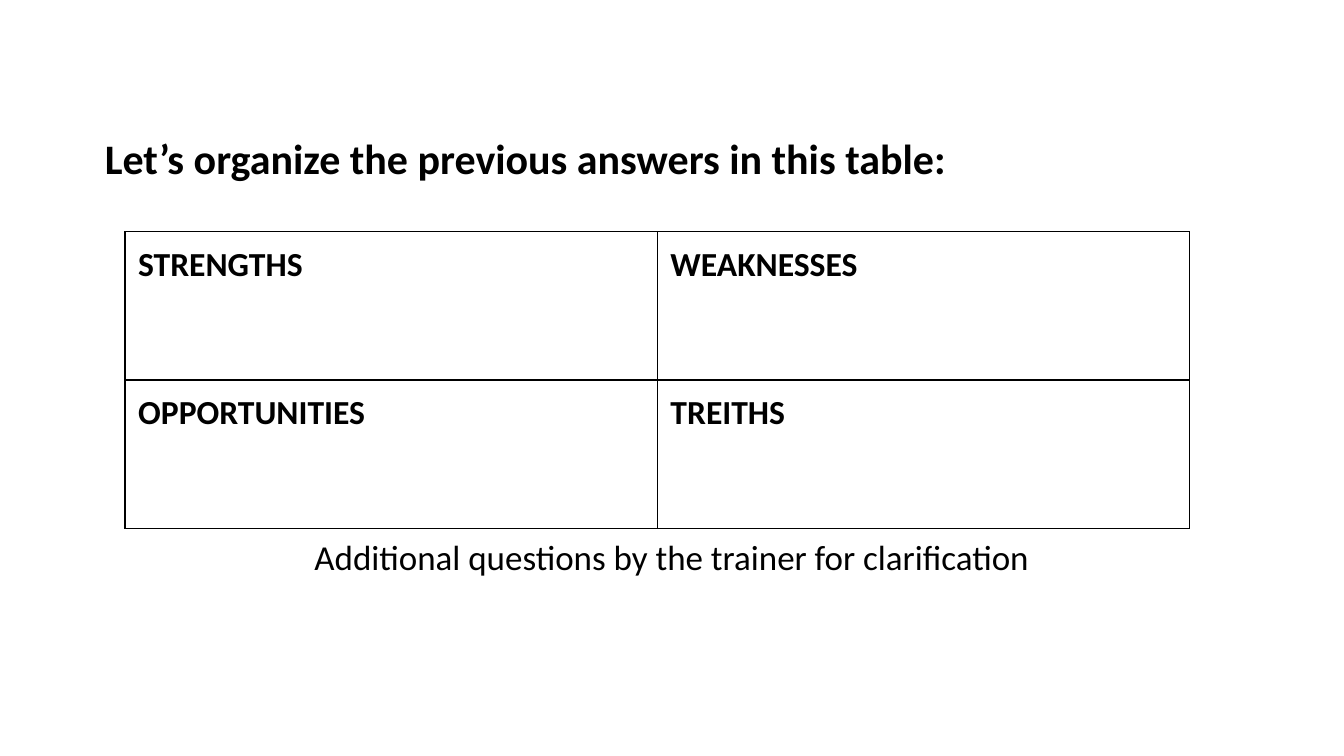
from dataclasses import dataclass

from lxml import etree
from pptx import Presentation, util as u
from pptx.dml.color import RGBColor
from pptx.enum import text
from pptx.oxml.ns import qn

COLORS = {"ink": "000000", "paper": "FFFFFF"}
WIDTH, HEIGHT = 13.33, 7.5
INSET = u.Inches(0.13)
BORDER = u.Pt(1)
SIDES = ("a:lnL", "a:lnR", "a:lnT", "a:lnB")
TABLE_LEFT, TABLE_TOP = 1.24, 2.3
COL, ROW = 5.28, 1.47
SWOT = (("STRENGTHS", "WEAKNESSES"), ("OPPORTUNITIES", "TREITHS"))


@dataclass(frozen=True)
class Line:
    words: str
    left: float
    top: float
    size: float
    bold: bool
    align: text.PP_ALIGN


LINES = (
    Line("Let’s organize the previous answers in this table:",
         0.91 / WIDTH, 1.24 / HEIGHT, 30, True, text.PP_ALIGN.LEFT),
    Line("Additional questions by the trainer for clarification",
         0.45 / WIDTH, 5.23 / HEIGHT, 25, False, text.PP_ALIGN.CENTER),
)


def write(p, words: str, size: float, bold: bool) -> None:
    r = p.add_run()
    r.text = words
    for name, value in {"name": "Calibri", "size": u.Pt(size), "bold": bold}.items():
        setattr(r.font, name, value)
    r.font.color.rgb = RGBColor.from_string(COLORS["ink"])


def set_insets(target) -> None:
    for side in ("left", "right", "top", "bottom"):
        setattr(target, f"margin_{side}", INSET)


def add_line(s, line: Line) -> None:
    sp = s.shapes.add_textbox(
        u.Inches(line.left * WIDTH), u.Inches(line.top * HEIGHT),
        u.Inches(12.42), u.Inches(0.84))
    tf = sp.text_frame
    tf.word_wrap = True
    tf.vertical_anchor = text.MSO_ANCHOR.TOP
    set_insets(tf)
    p = tf.paragraphs[0]
    for name, value in {"alignment": line.align, "line_spacing": 0.9}.items():
        setattr(p, name, value)
    write(p, line.words, line.size, line.bold)


def add_borders(cell) -> None:
    props = cell._tc.get_or_add_tcPr()
    for i, side in enumerate(SIDES):
        ln = etree.Element(qn(side), w=str(BORDER))
        fill = etree.SubElement(ln, qn("a:solidFill"))
        etree.SubElement(fill, qn("a:srgbClr"), val=COLORS["ink"])
        props.insert(i, ln)


def add_swot(s) -> None:
    rows, cols = len(SWOT), len(SWOT[0])
    table = s.shapes.add_table(
        rows, cols, u.Inches(TABLE_LEFT), u.Inches(TABLE_TOP),
        u.Inches(cols * COL), u.Inches(rows * ROW)).table
    table.first_row = table.horz_banding = False
    for i, labels in enumerate(SWOT):
        for j, label in enumerate(labels):
            cell = table.cell(i, j)
            cell.fill.solid()
            cell.fill.fore_color.rgb = RGBColor.from_string(COLORS["paper"])
            set_insets(cell)
            add_borders(cell)
            write(cell.text_frame.paragraphs[0], label, 24, True)


def main() -> None:
    prs = Presentation()
    prs.slide_width, prs.slide_height = u.Inches(WIDTH), u.Inches(HEIGHT)
    s = prs.slides.add_slide(prs.slide_layouts[6])
    add_swot(s)
    for line in LINES:
        add_line(s, line)
    prs.save("out.pptx")


if __name__ == "__main__":
    main()
